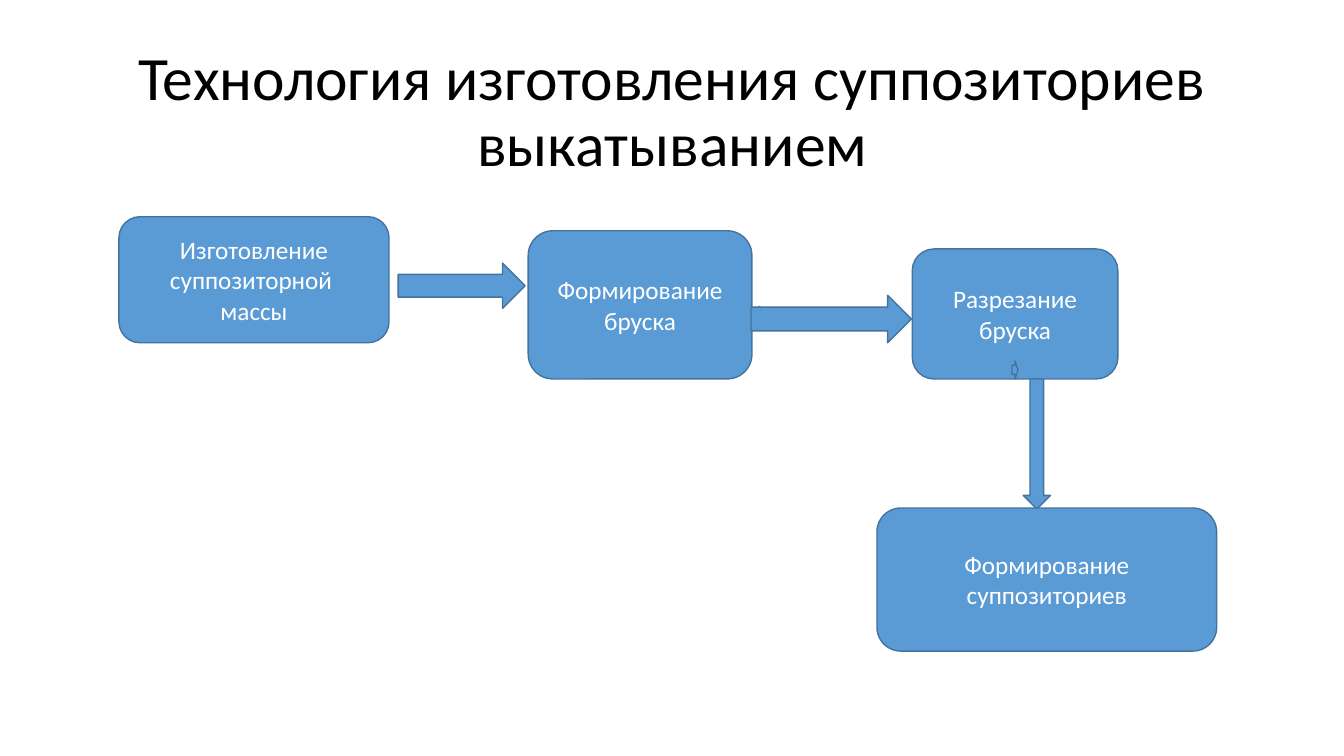
import pptx
import pptx.util
import pptx.dml.color
import pptx.enum.shapes
import pptx.enum.text
from dataclasses import dataclass

BOX = pptx.enum.shapes.MSO_SHAPE.ROUNDED_RECTANGLE
RIGHT = pptx.enum.shapes.MSO_SHAPE.RIGHT_ARROW
DOWN = pptx.enum.shapes.MSO_SHAPE.DOWN_ARROW

TITLE = "Технология изготовления суппозиториев\vвыкатыванием"
# Places are left, top, width, height in percent of the slide
TITLE_PLACE = (6.9, 5.33, 86.25, 19.33)
# Kind, place, text, rotation; from back to front
FLOW = [
    (BOX, (8.85, 28.67, 20.1, 16.67), "Изготовление суппозиторной \nмассы", 0),
    (RIGHT, (29.63, 34.8, 9.45, 6), "", 0),
    (BOX, (39.3, 30.53, 16.65, 19.6), "Формирование бруска", 0),
    (RIGHT, (56.33, 40.53, 0.38, 0.67), "", 180),
    (BOX, (67.88, 32.93, 15.3, 17.2), "Разрезание бруска", 0),
    (RIGHT, (55.88, 39.07, 11.93, 6.27), "", 0),
    (RIGHT, (75.3, 47.73, 0.45, 2.4), "", 0),
    (DOWN, (76.13, 50.13, 2.03, 17.2), "", 0),
    (BOX, (65.25, 67.2, 25.28, 18.93), "Формирование суппозиториев", 0),
]


@dataclass(frozen=True)
class Theme:
    font: str = "Calibri"
    title_size: int = 44
    box_size: int = 18
    line_width: int = 1
    title: str = "000000"
    text: str = "FFFFFF"
    fill: str = "5B9BD5"
    line: str = "43739E"


theme = Theme()
rgb = pptx.dml.color.RGBColor.from_string
prs = pptx.Presentation()
prs.slide_width = pptx.util.Inches(13.33)
prs.slide_height = pptx.util.Inches(7.5)


def to_emu(place):
    """Turn percentages of the slide into lengths."""
    sides = (prs.slide_width, prs.slide_height) * 2
    return [pptx.util.Emu(round(share * side / 100)) for share, side in zip(place, sides)]


def write(sp, text, *, size, color, spacing=1.0):
    tf = sp.text_frame
    tf.word_wrap = True
    tf.auto_size = pptx.enum.text.MSO_AUTO_SIZE.NONE
    tf.vertical_anchor = pptx.enum.text.MSO_ANCHOR.MIDDLE
    tf.text = text
    for p in tf.paragraphs:
        p.alignment = pptx.enum.text.PP_ALIGN.CENTER
        p.line_spacing = spacing
        for r in p.runs:
            r.font.name = theme.font
            r.font.size = pptx.util.Pt(size)
            r.font.color.rgb = rgb(color)


def add_flow_shape(slide, kind, place, text, rotation):
    sp = slide.shapes.add_shape(kind, *to_emu(place))
    sp.rotation = rotation
    sp.shadow.inherit = False
    sp.fill.solid()
    sp.fill.fore_color.rgb = rgb(theme.fill)
    sp.line.color.rgb = rgb(theme.line)
    sp.line.width = pptx.util.Pt(theme.line_width)
    if text:
        write(sp, text, size=theme.box_size, color=theme.text)


def main():
    slide = prs.slides.add_slide(prs.slide_layouts[5])
    title = slide.shapes.title
    title.left, title.top, title.width, title.height = to_emu(TITLE_PLACE)
    write(title, TITLE, size=theme.title_size, color=theme.title, spacing=0.9)
    for item in FLOW:
        add_flow_shape(slide, *item)
    prs.save("out.pptx")


if __name__ == "__main__":
    main()
